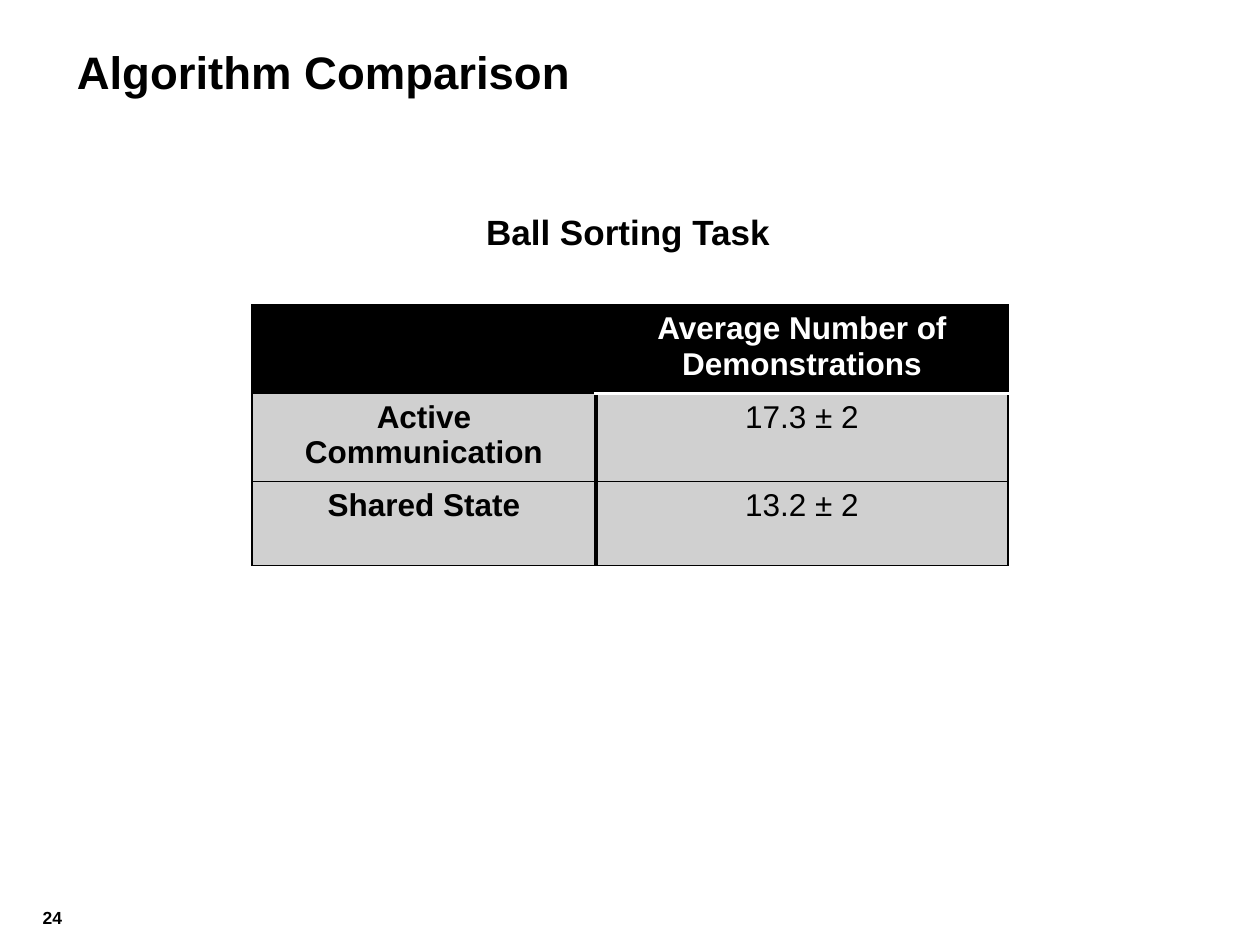
from pptx import Presentation
from pptx.dml.color import RGBColor
from pptx.enum.text import PP_ALIGN
from pptx.oxml.ns import qn
from pptx.util import Inches, Pt
from lxml import etree

CENTER = PP_ALIGN.CENTER
FONT = "Arial"
COLORS = {"black": "000000", "white": "FFFFFF", "body": "D0D0D0"}
COLUMN_WIDTHS = [2.73, 3.27]
ROW_HEIGHT = 0.67
RESULTS = [
    ["", "Average Number of Demonstrations"],
    ["Active Communication", "17.3 ± 2"],
    ["Shared State", "13.2 ± 2"],
]


def rgb(name):
    return RGBColor.from_string(COLORS[name])


def style_font(font, size, color, bold):
    font.name = FONT
    font.size = Pt(size)
    font.bold = bold
    font.color.rgb = rgb(color)


def add_label(slide, text, left, top, width, height, size, wrap=True):
    label = slide.shapes.add_textbox(
        Inches(left), Inches(top), Inches(width), Inches(height))
    frame = label.text_frame
    frame.word_wrap = wrap
    frame.text = text
    style_font(frame.paragraphs[0].runs[0].font, size, "black", True)
    return frame


def set_borders(cell, borders):
    properties = cell._tc.get_or_add_tcPr()
    for position, (side, (color, width)) in enumerate(borders.items()):
        line = etree.Element(qn(f"a:ln{side}"), w=str(Pt(width)))
        fill = etree.SubElement(line, qn("a:solidFill"))
        etree.SubElement(fill, qn("a:srgbClr"), val=COLORS[color])
        properties.insert(position, line)


def cell_borders(row, column):
    header_rule = ("white", 2) if column else ("black", 0.75)
    divider = ("black", 2)
    return {
        "L": divider if column else ("black", 0.75),
        "R": ("black", 1) if column else divider,
        "T": header_rule if row == 1 else ("black", 0.75),
        "B": header_rule if row == 0 else ("black", 0.75),
    }


def fill_cell(cell, text, row, column):
    header = row == 0
    cell.fill.solid()
    cell.fill.fore_color.rgb = rgb("black" if header else "body")
    cell.text = text
    paragraph = cell.text_frame.paragraphs[0]
    paragraph.alignment = CENTER
    paragraph.space_after = Pt(7.2)
    style_font(paragraph.font, 18, "white" if header else "black",
               header or column == 0)
    for run in paragraph.runs:
        style_font(run.font, 18, "white" if header else "black",
                   header or column == 0)
    set_borders(cell, cell_borders(row, column))


def add_results_table(slide, left, top):
    table = slide.shapes.add_table(
        len(RESULTS), len(COLUMN_WIDTHS), Inches(left), Inches(top),
        Inches(sum(COLUMN_WIDTHS)), Inches(ROW_HEIGHT * len(RESULTS))).table
    table.horz_banding = False
    for column, width in zip(table.columns, COLUMN_WIDTHS):
        column.width = Inches(width)
    for row, values in enumerate(RESULTS):
        table.rows[row].height = Inches(ROW_HEIGHT)
        for column, value in enumerate(values):
            fill_cell(table.cell(row, column), value, row, column)


def main():
    deck = Presentation()
    deck.slide_width = Inches(10)
    deck.slide_height = Inches(7.5)
    slide = deck.slides.add_slide(deck.slide_layouts[6])

    title = add_label(slide, "Algorithm Comparison", 0.61, 0.35, 5.57, 0.71, 26)
    title.margin_left = title.margin_right = 0
    title.paragraphs[0].line_spacing = 0.9
    add_label(slide, "Ball Sorting Task", 3.76, 1.62, 2.47, 0.44, 20, wrap=False)
    add_results_table(slide, 2, 2.42)
    add_label(slide, "24", 0.24, 7.15, 1.47, 0.27, 10)

    deck.save("out.pptx")


if __name__ == "__main__":
    main()
